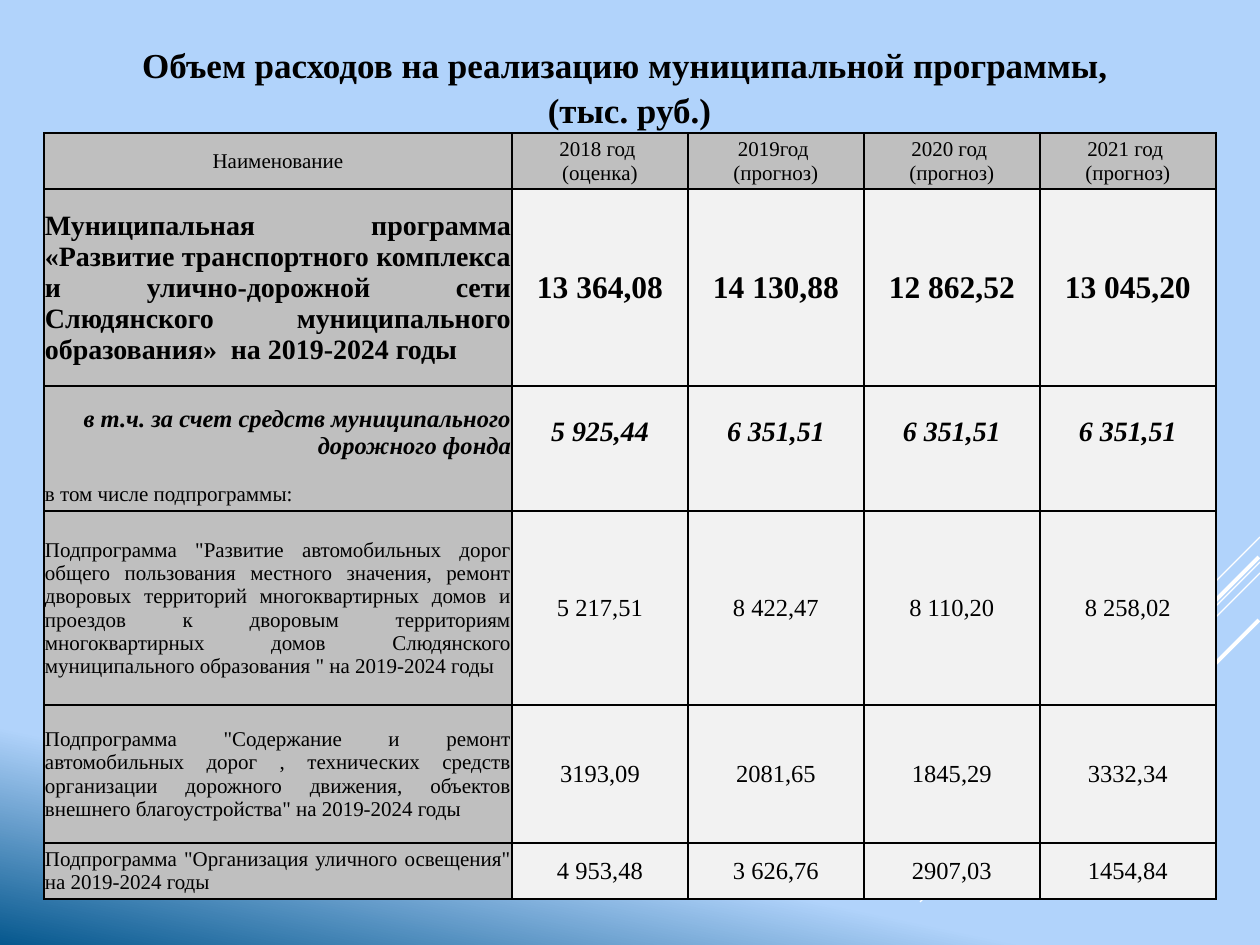
from lxml.etree import SubElement
from pptx import Presentation
from pptx.dml.color import RGBColor
from pptx.enum.shapes import MSO_CONNECTOR
from pptx.enum.text import MSO_ANCHOR, PP_ALIGN
from pptx.oxml.ns import qn
from pptx.util import Emu, Pt

PX_PER_INCH = 126
FONT = "Times New Roman"
BLACK = RGBColor(0x00, 0x00, 0x00)
WHITE = RGBColor(0xFF, 0xFF, 0xFF)
SKY = RGBColor(0xB1, 0xD3, 0xFB)
DEEP_BLUE = RGBColor(0x06, 0x58, 0x8E)
LABEL_GREY = RGBColor(0xBF, 0xBF, 0xBF)
VALUE_GREY = RGBColor(0xF2, 0xF2, 0xF2)

TITLE = "Объем расходов на реализацию муниципальной программы, \n(тыс. руб.)"
HEADINGS = ["Наименование", "2018 год \n(оценка)", "2019год \n(прогноз)",
            "2020 год \n(прогноз)", "2021 год \n(прогноз)"]
PROGRAMME = ("Муниципальная программа «Развитие транспортного комплекса и "
             "улично-дорожной сети Слюдянского муниципального образования»  "
             "на 2019-2024 годы")
ROAD_FUND = "в т.ч. за счет средств муниципального дорожного фонда"
ROADS = ('Подпрограмма "Развитие автомобильных дорог общего пользования местного '
         "значения, ремонт дворовых территорий многоквартирных домов и проездов к "
         "дворовым территориям многоквартирных домов Слюдянского муниципального "
         'образования " на 2019-2024 годы')
UPKEEP = ('Подпрограмма "Содержание и ремонт автомобильных дорог , технических '
          "средств организации дорожного движения, объектов внешнего "
          'благоустройства" на 2019-2024 годы')
LIGHTING = 'Подпрограмма "Организация уличного освещения" на 2019-2024 годы'

CENTER, JUSTIFY, RIGHT = PP_ALIGN.CENTER, PP_ALIGN.JUSTIFY, PP_ALIGN.RIGHT
COLUMN_WIDTHS = [468] + [176] * 4
# height, texts, label size, value size, label alignment, bold, italic, open sides
ROWS = [
    (56, HEADINGS, 12, 12, CENTER, False, False, ""),
    (197, [PROGRAMME, "13 364,08", "14 130,88", "12 862,52", "13 045,20"],
     16, 18, JUSTIFY, True, False, ""),
    (92, [ROAD_FUND, "5 925,44", "6 351,51", "6 351,51", "6 351,51"],
     14, 16, RIGHT, True, True, "B"),
    (33, ["в том числе подпрограммы:", "", "", "", ""],
     12, 12, JUSTIFY, False, False, "T"),
    (194, [ROADS, "5 217,51", "8 422,47", "8 110,20", "8 258,02"],
     12, 14, JUSTIFY, False, False, ""),
    (138, [UPKEEP, "3193,09", "2081,65", "1845,29", "3332,34"],
     12, 14, JUSTIFY, False, False, ""),
    (56, [LIGHTING, "4 953,48", "3 626,76", "2907,03", "1454,84"],
     12, 14, JUSTIFY, False, False, ""),
]
# start x, start y, horizontal run (all fall at 45 degrees to the left), points
STREAKS = [(1260, 537, 104, 0.75), (1260, 562, 340, 0.75), (1260, 573, 217, 0.75),
           (1259, 557, 198, 2.25), (1259, 620, 144, 2.25)]


def px(length):
    return Emu(round(length * 914400 / PX_PER_INCH))


class SlideBuilder:
    def __init__(self, slide):
        self.slide = slide

    def background(self, clockwise_angle):
        fill = self.slide.background.fill
        fill.gradient()
        fill.gradient_angle = 360 - clockwise_angle
        for stop, (position, color) in zip(fill.gradient_stops,
                                           [(0.82, SKY), (1, DEEP_BLUE)]):
            stop.position = position
            stop.color.rgb = color

    def streak(self, x, y, run, weight):
        line = self.slide.shapes.add_connector(
            MSO_CONNECTOR.STRAIGHT, px(x), px(y), px(x - run), px(y + run))
        line.line.color.rgb = WHITE
        line.line.width = Pt(weight)
        SubElement(line._element.spPr, qn("a:effectLst"))

    def set_text(self, frame, text, size, align, bold=False, italic=False, before=0):
        frame.text = text
        for paragraph in frame.paragraphs:
            paragraph.alignment = align
            paragraph.space_before = Pt(before)
            for run in paragraph.runs:
                font = run.font
                font.name, font.size = FONT, Pt(size)
                font.bold, font.italic = bold, italic
                font.color.rgb = BLACK
            if not paragraph.runs:
                SubElement(paragraph._p, qn("a:endParaRPr"), sz=str(size * 100))

    def title(self, text, left, top, width, height):
        frame = self.slide.shapes.add_textbox(
            px(left), px(top), px(width), px(height)).text_frame
        frame.word_wrap = True
        self.set_text(frame, text, 20, CENTER, bold=True, before=2)

    def borders(self, cell, open_sides):
        properties = cell._tc.get_or_add_tcPr()
        for side in "LRTB":
            edge = SubElement(properties, qn("a:ln" + side), w=str(Pt(1)))
            if side in open_sides:
                SubElement(edge, qn("a:noFill"))
            else:
                paint = SubElement(edge, qn("a:solidFill"))
                SubElement(paint, qn("a:srgbClr"), val=str(BLACK))

    def cell(self, cell, fill, open_sides):
        cell.margin_left = cell.margin_right = cell.margin_top = px(1)
        cell.margin_bottom = 0
        cell.vertical_anchor = MSO_ANCHOR.MIDDLE
        self.borders(cell, open_sides)
        cell.fill.solid()
        cell.fill.fore_color.rgb = fill

    def table(self, left, top):
        table = self.slide.shapes.add_table(
            len(ROWS), len(COLUMN_WIDTHS), px(left), px(top),
            px(sum(COLUMN_WIDTHS)), px(sum(row[0] for row in ROWS))).table
        table.first_row = table.horz_banding = False
        for column, width in zip(table.columns, COLUMN_WIDTHS):
            column.width = px(width)
        for r, row in enumerate(ROWS):
            height, texts, label_size, value_size, align, bold, italic, sides = row
            table.rows[r].height = px(height)
            for c, text in enumerate(texts):
                cell = table.cell(r, c)
                self.cell(cell, LABEL_GREY if r == 0 or c == 0 else VALUE_GREY, sides)
                self.set_text(cell.text_frame, text, value_size if c else label_size,
                              CENTER if c else align, bold, italic)


def main():
    deck = Presentation()
    deck.slide_width, deck.slide_height = px(1260), px(945)
    builder = SlideBuilder(deck.slides.add_slide(deck.slide_layouts[6]))
    builder.background(102)
    for streak in STREAKS:
        builder.streak(*streak)
    builder.title(TITLE, 84, 37, 1091, 97)
    builder.table(44, 133)
    deck.save("out.pptx")


if __name__ == "__main__":
    main()
